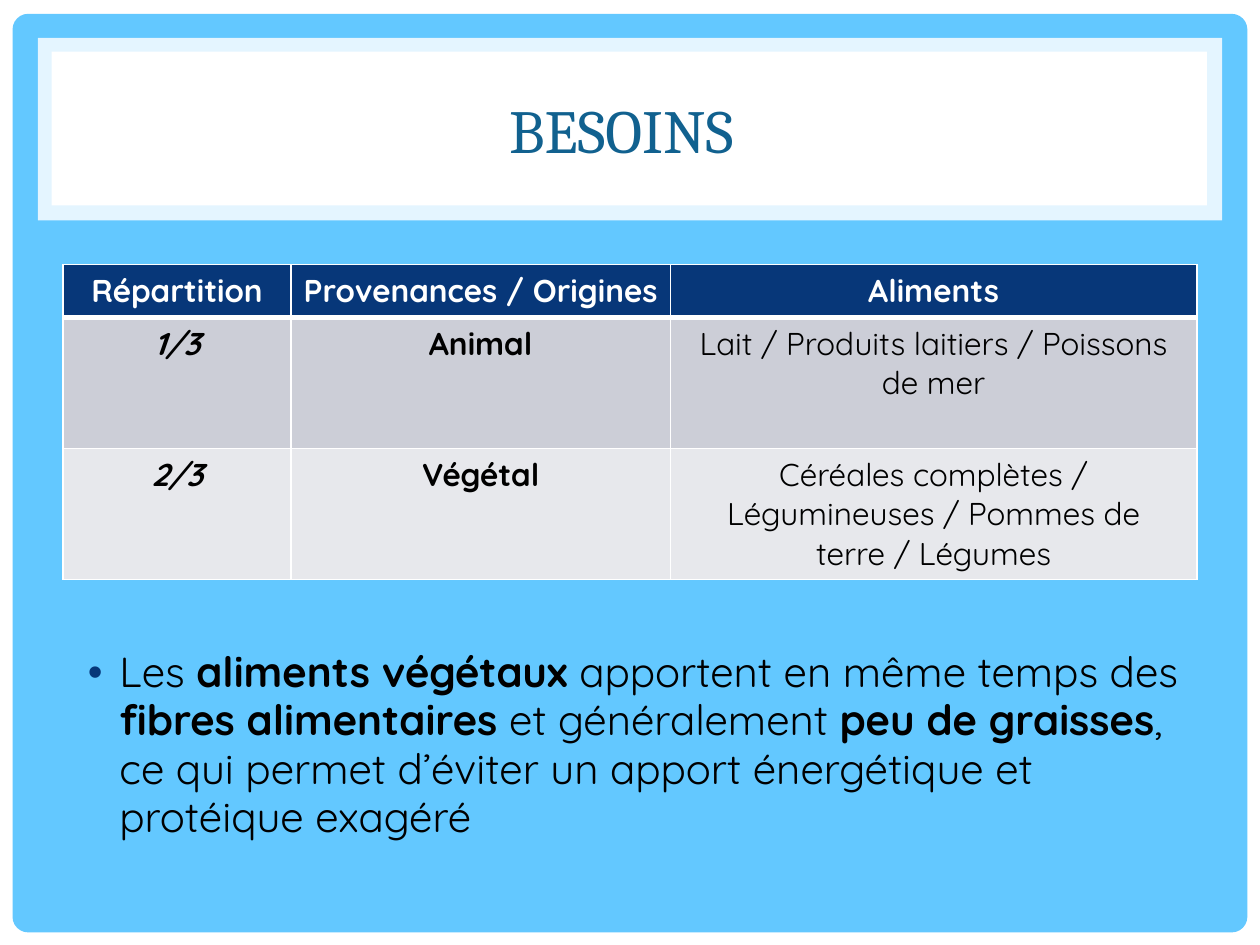
import pptx
import pptx.util
import pptx.dml.color
import pptx.enum.shapes
import pptx.enum.text
import pptx.oxml.ns
import lxml.etree

Inches, Pt = pptx.util.Inches, pptx.util.Pt
SHAPE = pptx.enum.shapes.MSO_SHAPE
CENTER = pptx.enum.text.PP_ALIGN.CENTER
qn = pptx.oxml.ns.qn

SKY, NAVY, TEAL, WHITE, BLACK = "63C8FF", "073779", "11618F", "FFFFFF", "000000"
TITLE_FONT, BODY_FONT = "Cambria", "Quicksand"

TITLE = "BESOINS "
FOOD_ROWS = [
    ("Répartition", "Provenances / Origines", "Aliments"),
    ("1/3", "Animal", "Lait / Produits laitiers / Poissons de mer"),
    ("2/3", "Végétal", "Céréales complètes / Légumineuses / Pommes de terre / Légumes"),
]
ROW_FILLS = [NAVY, "CCCED7", "E7E8EC"]
COLUMN_WIDTHS = [1.81, 3.01, 4.18]
ROW_HEIGHTS = [0.42, 1.04, 1.04]
REMARK = [  # (text, bold)
    ("Les ", False),
    ("aliments végétaux ", True),
    ("apportent en même temps des ", False),
    ("fibres alimentaires ", True),
    ("et généralement ", False),
    ("peu de graisses", True),
    (", ce qui permet d’éviter un apport énergétique et protéique exagéré", False),
]
PANELS = [  # preset, left, top, width, height, fill, opacity in %
    (SHAPE.RECTANGLE, 0, 0, 10, 7.5, WHITE, 100),
    (SHAPE.ROUNDED_RECTANGLE, 0.1, 0.11, 9.8, 7.29, SKY, 100),
    (SHAPE.RECTANGLE, 0.3, 0.3, 9.4, 1.45, WHITE, 83),
    (SHAPE.RECTANGLE, 0.41, 0.41, 9.17, 1.22, WHITE, 100),
]


def rgb(color):
    return pptx.dml.color.RGBColor.from_string(color)


def fill_solid(fill, color):
    fill.solid()
    fill.fore_color.rgb = rgb(color)


def add_run(paragraph, text, size, color, font=BODY_FONT, bold=False, italic=False):
    run = paragraph.add_run()
    run.text = text
    run.font.name, run.font.size = font, Pt(size)
    run.font.bold, run.font.italic = bold, italic
    run.font.color.rgb = rgb(color)


def add_panel(slide, preset, left, top, width, height, color, opacity):
    panel = slide.shapes.add_shape(preset, *map(Inches, (left, top, width, height)))
    panel.shadow.inherit = False
    panel.line.fill.background()
    fill_solid(panel.fill, color)
    if preset == SHAPE.ROUNDED_RECTANGLE:
        panel.adjustments[0] = 0.017
    if opacity < 100:
        tint = panel.fill._xPr.find(".//" + qn("a:srgbClr"))
        lxml.etree.SubElement(tint, qn("a:alpha"), val=str(opacity * 1000))


def set_borders(cell, widths):
    """Draw white borders; widths maps the sides L, R, T, B to points."""
    properties = cell._tc.get_or_add_tcPr()
    for position, side in enumerate("LRTB"):
        border = lxml.etree.Element(qn("a:ln" + side), w=str(Pt(widths[side])))
        solid = lxml.etree.SubElement(border, qn("a:solidFill"))
        lxml.etree.SubElement(solid, qn("a:srgbClr"), val=WHITE)
        properties.insert(position, border)


def add_title(slide):
    title = slide.shapes.title
    title.left, title.top, title.width, title.height = map(Inches, (0.47, 0.45, 9.03, 1.14))
    slide.shapes._spTree.append(title._element)  # in front of the panels
    title.text_frame.vertical_anchor = pptx.enum.text.MSO_ANCHOR.MIDDLE
    heading = title.text_frame.paragraphs[0]
    heading.alignment = CENTER
    add_run(heading, TITLE, 35, TEAL, TITLE_FONT)


def add_food_table(slide):
    frame = slide.shapes.add_table(
        len(FOOD_ROWS), len(COLUMN_WIDTHS), Inches(0.5), Inches(2.1),
        Inches(sum(COLUMN_WIDTHS)), Inches(sum(ROW_HEIGHTS)))
    table = frame.table
    for column, width in zip(table.columns, COLUMN_WIDTHS):
        column.width = Inches(width)
    for r, texts in enumerate(FOOD_ROWS):
        table.rows[r].height = Inches(ROW_HEIGHTS[r])
        header = r == 0
        for c, text in enumerate(texts):
            cell = table.cell(r, c)
            fill_solid(cell.fill, ROW_FILLS[r])
            set_borders(cell, {"L": 1, "R": 1, "T": 3 if r == 1 else 1, "B": 3 if header else 1})
            paragraph = cell.text_frame.paragraphs[0]
            paragraph.alignment = CENTER
            add_run(paragraph, text, 18, WHITE if header else BLACK,
                    bold=header or c < 2, italic=not header and c == 0)


def add_remark(slide):
    box = slide.shapes.add_textbox(*map(Inches, (0.47, 5.1, 9.03, 1.86)))
    box.text_frame.word_wrap = True
    paragraph = box.text_frame.paragraphs[0]
    paragraph.space_before = Pt(4.8)
    paragraph.line_spacing = 0.96
    properties = paragraph._p.get_or_add_pPr()
    properties.set("marL", str(Inches(0.38)))
    properties.set("indent", str(Inches(-0.25)))
    bullet_color = lxml.etree.SubElement(properties, qn("a:buClr"))
    lxml.etree.SubElement(bullet_color, qn("a:srgbClr"), val=NAVY)
    lxml.etree.SubElement(properties, qn("a:buFont"), typeface="Arial")
    lxml.etree.SubElement(properties, qn("a:buChar"), char="•")
    for text, bold in REMARK:
        add_run(paragraph, text, 24, BLACK, bold=bold)


def main():
    deck = pptx.Presentation()
    deck.slide_width, deck.slide_height = Inches(10), Inches(7.5)
    slide = deck.slides.add_slide(deck.slide_layouts[5])
    fill_solid(slide.background.fill, SKY)
    for panel in PANELS:
        add_panel(slide, *panel)
    add_title(slide)
    add_remark(slide)
    add_food_table(slide)
    deck.save("out.pptx")


if __name__ == "__main__":
    main()
